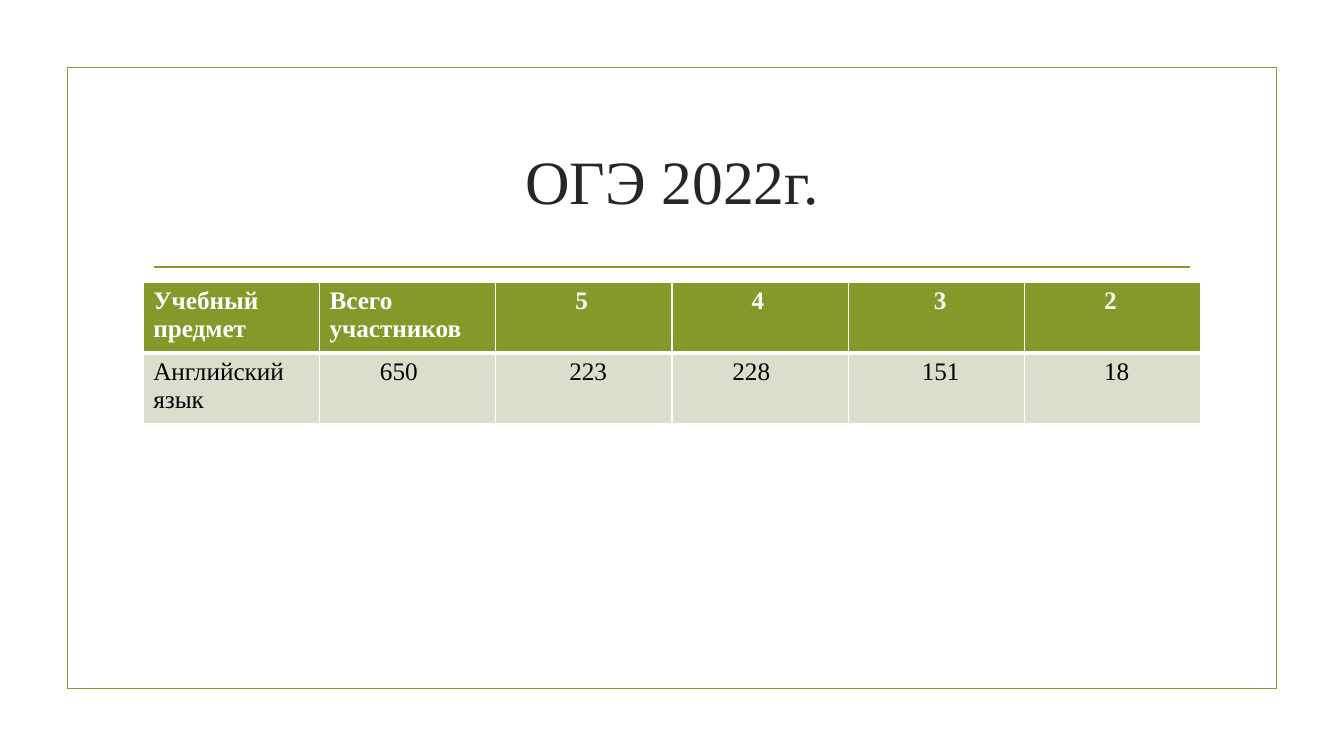
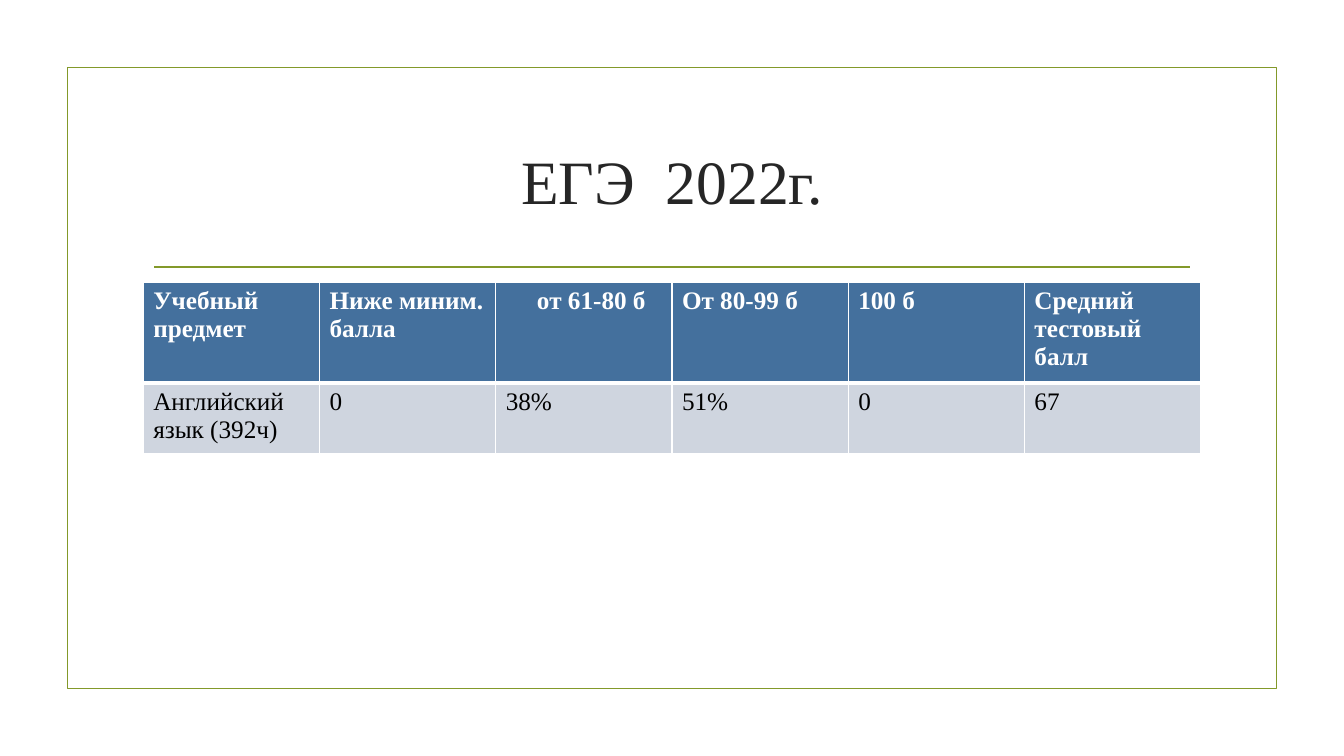
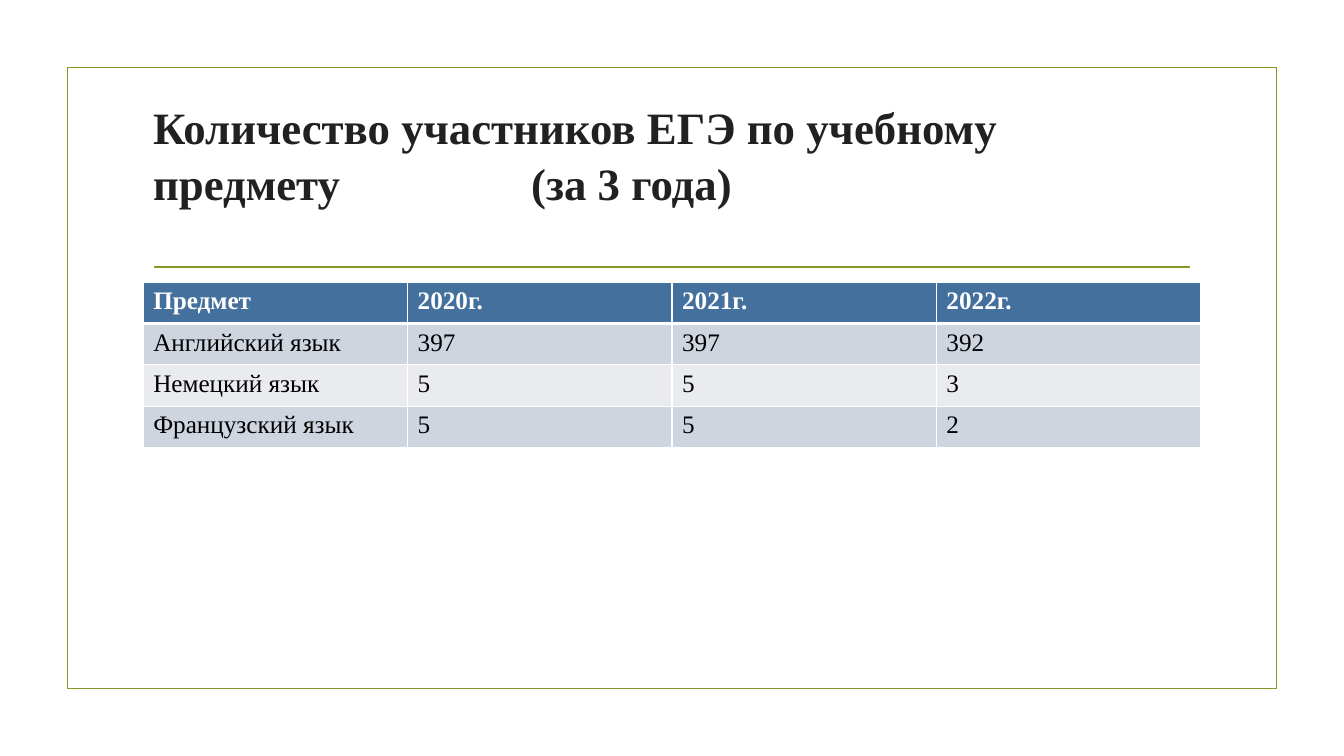
import dataclasses

import pptx
import pptx.dml.color
import pptx.enum.shapes
import pptx.enum.text
import pptx.oxml
import pptx.oxml.ns
import pptx.util

Inches, Pt = pptx.util.Inches, pptx.util.Pt
RGB = pptx.dml.color.RGBColor.from_string
PP_ALIGN = pptx.enum.text.PP_ALIGN


@dataclasses.dataclass(frozen=True)
class Theme:
    font: str = "Times New Roman"
    title_size: int = 44
    heading_size: int = 32
    cell_size: int = 18
    line_width: float = 1.25
    accent: str = "83992A"
    title: str = "262626"
    heading: str = "212121"
    white: str = "FFFFFF"
    black: str = "000000"
    green: tuple = ("83992A", "D9DECD", "ECEFE7")  # header, odd rows, even rows
    blue: tuple = ("44709D", "CFD5DF", "E9EBEF")


T = Theme()
W, H = 13.33, 7.5
FRAME_INSET, TABLE_INSET, RULE_INSET = 0.67, 1.42, 1.53
TITLE_TOP, TITLE_H, RULE_Y, TABLE_TOP, ROW_H = 1.07, 1.43, 2.65, 2.8, 0.41
CONTENT_W = W - 2 * TABLE_INSET

# Each row: cell texts, then the left indent of each cell in inches
slides = [
    dict(title="ОГЭ 2022г.", is_heading=False, palette=T.green, rows=[
        (["Учебный предмет", "Всего участников", "5", "4", "3", "2"],
         [0, 0, 0.69, 0.69, 0.75, 0.69]),
        (["Английский язык", "650", "223", "228", "151", "18"],
         [0, 0.5, 0.63, 0.5, 0.63, 0.69]),
    ]),
    dict(title="ЕГЭ  2022г.", is_heading=False, palette=T.blue, rows=[
        (["Учебный предмет", "Ниже миним. балла", "от 61-80 б", "От 80-99 б",
          "100 б", "Средний тестовый балл"], [0, 0, 0.31, 0, 0, 0]),
        (["Английский язык (392ч)", "0", "38%", "51%", "0", "67"], [0] * 6),
    ]),
    dict(title="Количество участников ЕГЭ по учебному предмету\t(за 3 года)",
         is_heading=True, palette=T.blue, rows=[
        (["Предмет", "2020г.", "2021г.", "2022г."], [0] * 4),
        (["Английский язык", "397", "397", "392"], [0] * 4),
        (["Немецкий язык", "5", "5", "3"], [0] * 4),
        (["Французский язык", "5", "5", "2"], [0] * 4),
    ]),
]


def style_runs(p, size, color, bold=False):
    for r in p.runs:
        r.font.name, r.font.size, r.font.bold = T.font, Pt(size), bold
        r.font.color.rgb = RGB(color)


def add_xml(parent, tag, attrs="", inner=""):
    xml = f"<a:{tag} {pptx.oxml.ns.nsdecls('a')} {attrs}>{inner}</a:{tag}>"
    parent.append(pptx.oxml.parse_xml(xml))


prs = pptx.Presentation()
prs.slide_width, prs.slide_height = Inches(W), Inches(H)

for content in slides:
    s = prs.slides.add_slide(prs.slide_layouts[6])

    frame = s.shapes.add_shape(
        pptx.enum.shapes.MSO_SHAPE.RECTANGLE, Inches(FRAME_INSET), Inches(FRAME_INSET),
        Inches(W - 2 * FRAME_INSET), Inches(H - 2 * FRAME_INSET))
    frame.shadow.inherit = False
    frame.fill.background()
    rule = s.shapes.add_connector(
        pptx.enum.shapes.MSO_CONNECTOR.STRAIGHT, Inches(RULE_INSET), Inches(RULE_Y),
        Inches(W - RULE_INSET), Inches(RULE_Y))
    for sp in (frame, rule):
        sp.line.color.rgb = RGB(T.accent)
        sp.line.width = Pt(T.line_width)
    add_xml(rule._element.spPr, "effectLst")

    title = s.shapes.add_textbox(Inches(TABLE_INSET), Inches(TITLE_TOP),
                                 Inches(CONTENT_W), Inches(TITLE_H))
    tf = title.text_frame
    tf.word_wrap = True
    tf.vertical_anchor = pptx.enum.text.MSO_ANCHOR.MIDDLE
    tf.text = content["title"]
    p = tf.paragraphs[0]
    if content["is_heading"]:
        tf.margin_top, tf.margin_bottom = 0, Inches(0.53)
        p.line_spacing = 1.05
        add_xml(p._p.get_or_add_pPr(), "tabLst",
                inner=f'<a:tab pos="{Inches(3.75)}" algn="l"/>')
        style_runs(p, T.heading_size, T.heading, bold=True)
    else:
        p.alignment = PP_ALIGN.CENTER
        style_runs(p, T.title_size, T.title)

    rows = content["rows"]
    n_cols = len(rows[0][0])
    table = s.shapes.add_table(len(rows), n_cols, Inches(TABLE_INSET), Inches(TABLE_TOP),
                               Inches(CONTENT_W), Inches(ROW_H * len(rows))).table
    for col in table.columns:
        col.width = Inches(CONTENT_W / n_cols)
    header_fill, *bands = content["palette"]
    for i, (texts, indents) in enumerate(rows):
        table.rows[i].height = Inches(ROW_H)
        is_header = i == 0
        for j, (text, indent) in enumerate(zip(texts, indents)):
            cell = table.cell(i, j)
            cell.text_frame.text = text
            p = cell.text_frame.paragraphs[0]
            if indent:
                p._p.get_or_add_pPr().set("marL", str(Inches(indent)))
            style_runs(p, T.cell_size, T.white if is_header else T.black, is_header)
            widths = dict(lnL=1, lnR=1, lnT=3 if i == 1 else 1, lnB=3 if is_header else 1)
            for side, width in widths.items():
                add_xml(cell._tc.get_or_add_tcPr(), side, f'w="{Pt(width)}"',
                        f'<a:solidFill><a:srgbClr val="{T.white}"/></a:solidFill>')
            cell.fill.solid()
            cell.fill.fore_color.rgb = RGB(header_fill if is_header else bands[(i - 1) % 2])

prs.save("out.pptx")
